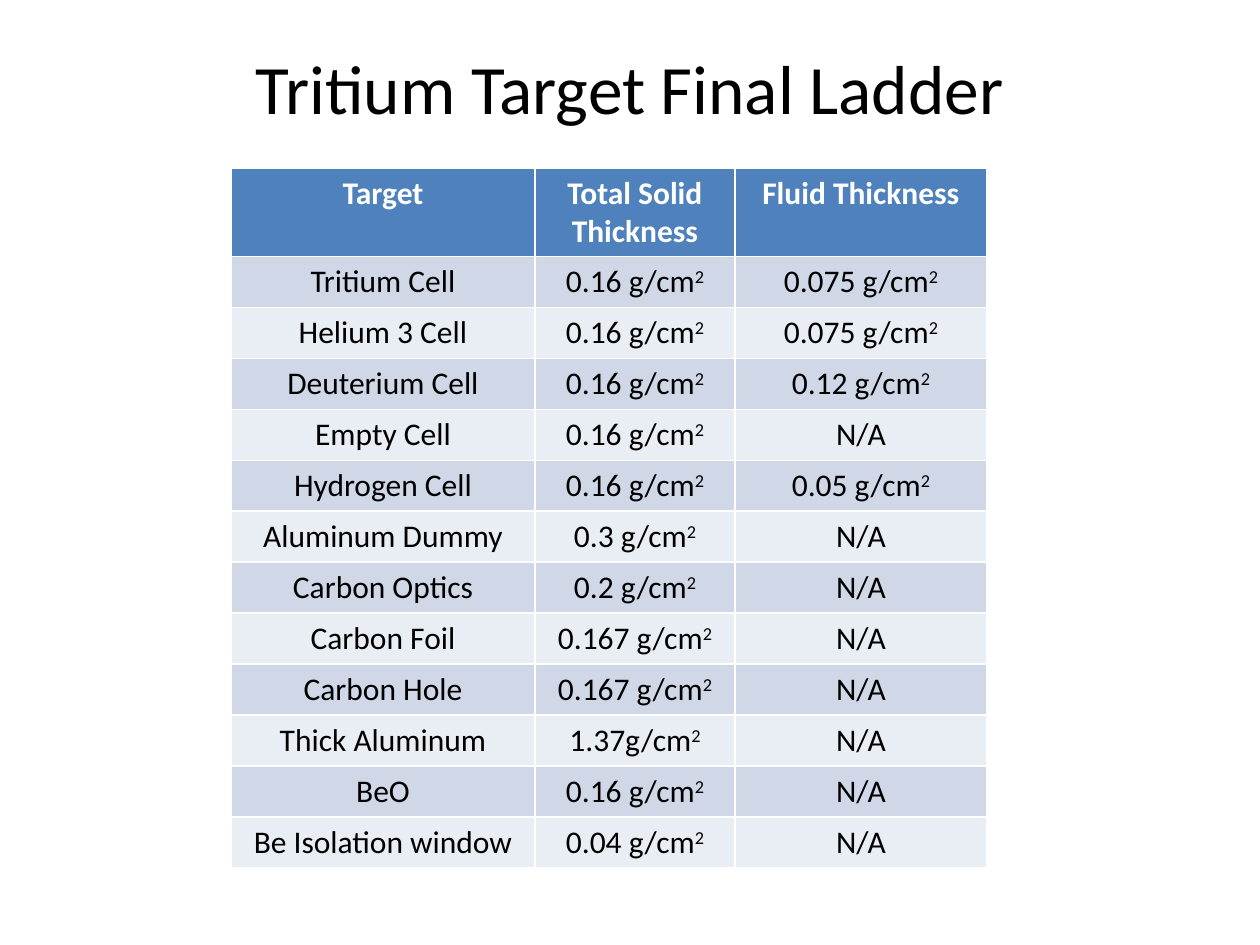
from dataclasses import dataclass

from pptx import Presentation
from pptx import util as u
from pptx.dml import color
from pptx.enum import text

PX = 914400 // 126
FONT = "Calibri"
COLORS = {
    "black": "000000",
    "white": "FFFFFF",
    "header": "4F81BD",
    "odd": "D0D8E8",
    "even": "E9EDF4",
}
COLUMN_WIDTHS = (304, 200, 252)
HEADER_HEIGHT = 88
ROW_HEIGHT = 51
UNIT = "g/cm"


@dataclass(frozen=True)
class Target:
    name: str
    solid: str
    fluid: str = "N/A"


HEADER = Target("Target", "Total Solid Thickness", "Fluid Thickness")
TARGETS = (
    Target("Tritium Cell", "0.16 g/cm", "0.075 g/cm"),
    Target("Helium 3 Cell", "0.16 g/cm", "0.075 g/cm"),
    Target("Deuterium Cell", "0.16 g/cm", "0.12 g/cm"),
    Target("Empty Cell", "0.16 g/cm"),
    Target("Hydrogen Cell", "0.16 g/cm", "0.05 g/cm"),
    Target("Aluminum Dummy", "0.3 g/cm"),
    Target("Carbon Optics", "0.2 g/cm"),
    Target("Carbon Foil", "0.167 g/cm"),
    Target("Carbon Hole", "0.167 g/cm"),
    Target("Thick Aluminum", "1.37g/cm"),
    Target("BeO", "0.16 g/cm"),
    Target("Be Isolation window", "0.04 g/cm"),
)


def px(length: int) -> u.Emu:
    return u.Emu(length * PX)


def rgb(name: str) -> color.RGBColor:
    return color.RGBColor.from_string(COLORS[name])


def write(para, words: str, *, size: float = 18, ink: str = "black",
          bold: bool = False, raised: bool = False) -> None:
    para.alignment = text.PP_ALIGN.CENTER
    span = para.add_run()
    span.text = words
    span.font.name = FONT
    span.font.size = u.Pt(size)
    span.font.bold = bold
    span.font.color.rgb = rgb(ink)
    if raised:
        span.font._element.set("baseline", "30000")


def draw_title(page, words: str) -> None:
    box = page.shapes.add_textbox(px(63), px(38), px(1134), px(98))
    frame = box.text_frame
    frame.word_wrap = True
    frame.vertical_anchor = text.MSO_ANCHOR.MIDDLE
    write(frame.paragraphs[0], words, size=39.6)


def fill_row(cells, target: Target, fill: str, *, ink: str = "black",
             bold: bool = False) -> None:
    for cell, words in zip(cells, (target.name, target.solid, target.fluid)):
        cell.fill.solid()
        cell.fill.fore_color.rgb = rgb(fill)
        para = cell.text_frame.paragraphs[0]
        write(para, words, ink=ink, bold=bold)
        if words.endswith(UNIT):
            write(para, "2", ink=ink, bold=bold, raised=True)


def draw_table(page, targets: tuple[Target, ...]) -> None:
    height = HEADER_HEIGHT + ROW_HEIGHT * len(targets)
    table = page.shapes.add_table(
        len(targets) + 1, len(COLUMN_WIDTHS),
        px(231), px(168), px(sum(COLUMN_WIDTHS)), px(height),
    ).table
    for column, width in zip(table.columns, COLUMN_WIDTHS):
        column.width = px(width)
    header, *rows = table.rows
    header.height = px(HEADER_HEIGHT)
    fill_row(header.cells, HEADER, "header", ink="white", bold=True)
    for index, (row, target) in enumerate(zip(rows, targets)):
        row.height = px(ROW_HEIGHT)
        fill_row(row.cells, target, "even" if index % 2 else "odd")


def main() -> None:
    deck = Presentation()
    deck.slide_width, deck.slide_height = px(1260), px(945)
    page = deck.slides.add_slide(deck.slide_layouts[6])
    draw_title(page, "Tritium Target Final Ladder")
    draw_table(page, TARGETS)
    deck.save("out.pptx")


if __name__ == "__main__":
    main()
